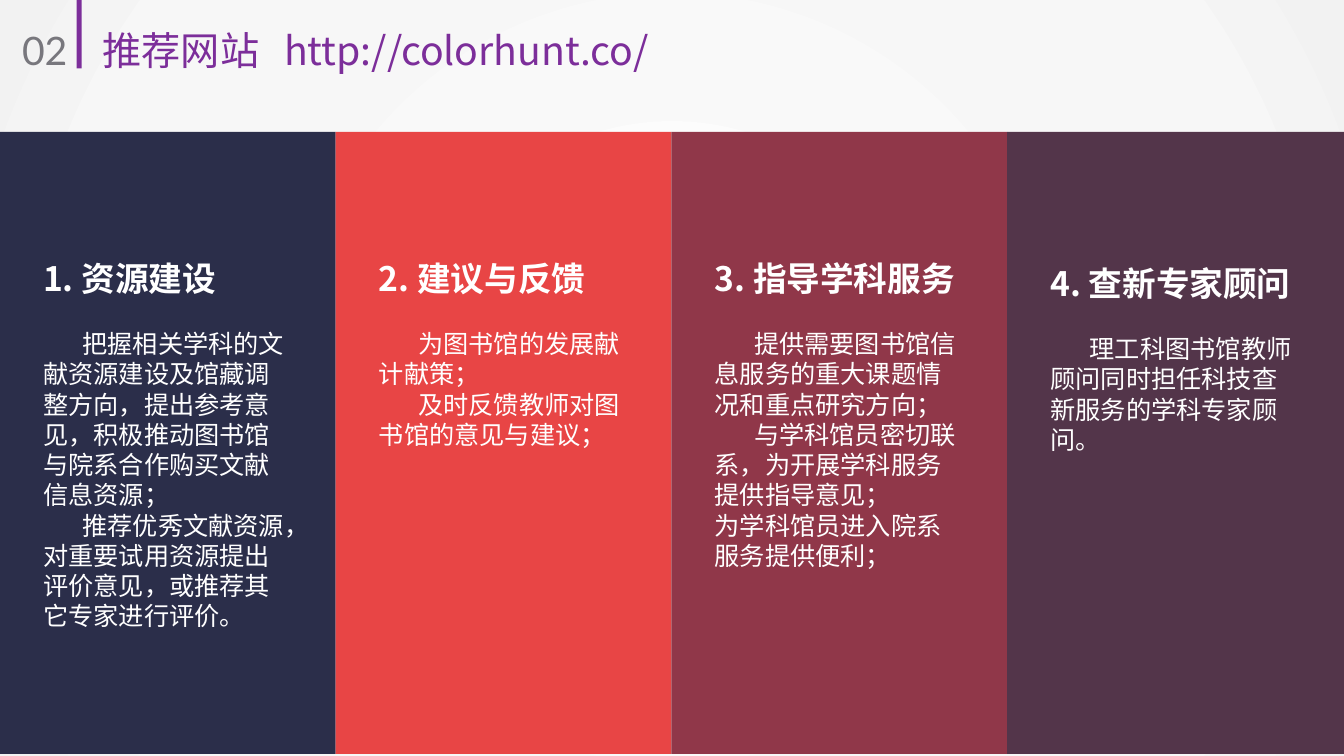
from lxml import etree
from pptx import Presentation
from pptx.dml.color import RGBColor
from pptx.enum import shapes, text
from pptx.oxml import ns, parse_xml
from pptx.util import Inches, Pt

NAVY = RGBColor(0x2B, 0x2E, 0x4A)
CORAL = RGBColor(0xE8, 0x45, 0x45)
WINE = RGBColor(0x90, 0x37, 0x49)
PLUM = RGBColor(0x53, 0x35, 0x4A)
PURPLE = RGBColor(0x7C, 0x2E, 0x9A)
GRAY = RGBColor(0x78, 0x77, 0x7D)
WHITE = RGBColor(0xFF, 0xFF, 0xFF)
SANS = "Noto Sans CJK SC"
COLUMN_WIDTH = 3.33

COLUMNS = [
    (NAVY, 2.51, 3.84, "1. 资源建设", [
        "把握相关学科的文献资源建设及馆藏调整方向，提出参考意见，积极推动图书馆与院系合作购买文献信息资源；",
        "推荐优秀文献资源，对重要试用资源提出评价意见，或推荐其它专家进行评价。"]),
    (CORAL, 2.51, 2.02, "2. 建议与反馈", [
        "为图书馆的发展献计献策；",
        "及时反馈教师对图书馆的意见与建议；"]),
    (WINE, 2.51, 3.23, "3. 指导学科服务", [
        "提供需要图书馆信息服务的重大课题情况和重点研究方向；",
        "与学科馆员密切联系，为开展学科服务提供指导意见；",
        "为学科馆员进入院系服务提供便利；"]),
    (PLUM, 2.56, 2.02, "4. 查新专家顾问", [
        "理工科图书馆教师顾问同时担任科技查新服务的学科专家顾问。"]),
]
UNINDENTED = "为学科馆员进入院系服务提供便利；"

deck = Presentation()
deck.slide_width, deck.slide_height = Inches(13.33), Inches(7.5)
page = deck.slides.add_slide(deck.slide_layouts[6])

stops = "".join(
    f'<a:gs pos="{position * 1000}"><a:srgbClr val="{color}"/></a:gs>'
    for position, color in [(0, "FFFFFF"), (50, "F9F9F9"), (77, "F7F7F7"), (100, "F2F2F2")])
page.background.fill.solid()
background = page.element.find(".//" + ns.qn("p:bgPr"))
background.replace(background[0], parse_xml(
    f'<a:gradFill {ns.nsdecls("a")} rotWithShape="1"><a:gsLst>{stops}</a:gsLst>'
    '<a:path path="circle"><a:fillToRect l="50000" t="50000" r="50000" b="50000"/></a:path>'
    '</a:gradFill>'))


def add_block(left, top, width, height, color):
    block = page.shapes.add_shape(
        shapes.MSO_SHAPE.RECTANGLE, Inches(left), Inches(top), Inches(width), Inches(height))
    block.shadow.inherit = False
    block.fill.solid()
    block.fill.fore_color.rgb = color
    block.line.fill.background()


def add_text(left, top, width, height, lines, sizes, color, font=SANS, bold_first=False):
    box = page.shapes.add_textbox(Inches(left), Inches(top), Inches(width), Inches(height))
    frame = box.text_frame
    frame.text = "\n".join(lines)
    frame.word_wrap = True
    frame.auto_size = text.MSO_AUTO_SIZE.SHAPE_TO_FIT_TEXT
    for index, para in enumerate(frame.paragraphs):
        size = sizes[min(index, len(sizes) - 1)]
        para.line_spacing = Pt(size * 1.2)
        for span in para.runs:
            span.font.size = Pt(size)
            span.font.bold = bold_first and index == 0
            span.font.name = font
            span.font.color.rgb = color
            east_asian = etree.SubElement(span.font._element, ns.qn("a:ea"))
            east_asian.set("typeface", font)
    return frame.paragraphs


for number, (color, top, height, heading, body) in enumerate(COLUMNS):
    left = number * COLUMN_WIDTH
    add_block(left, 1.31, 3.34 if number == 3 else COLUMN_WIDTH, 6.17, color)
    paras = add_text(left + 0.33, top, 2.68, height, [heading, *body], [24, 18], WHITE,
                     bold_first=True)
    paras[1].space_before = Pt(21.6)
    for para in paras[1:]:
        if para.text != UNINDENTED:
            para._p.get_or_add_pPr().set("indent", str(Inches(0.39)))

add_block(0.76, 0, 0.05, 0.68, PURPLE)
add_text(0.12, 0.21, 0.72, 0.57, ["02"], [28], GRAY, font="Lato")
title = add_text(0.92, 0.21, 9.92, 0.57, ["推荐网站\thttp://colorhunt.co/"], [28], PURPLE)[0]
tabs = etree.SubElement(title._p.get_or_add_pPr(), ns.qn("a:tabLst"))
etree.SubElement(tabs, ns.qn("a:tab"), pos=str(Inches(1.8)), algn="l")

deck.save("out.pptx")
